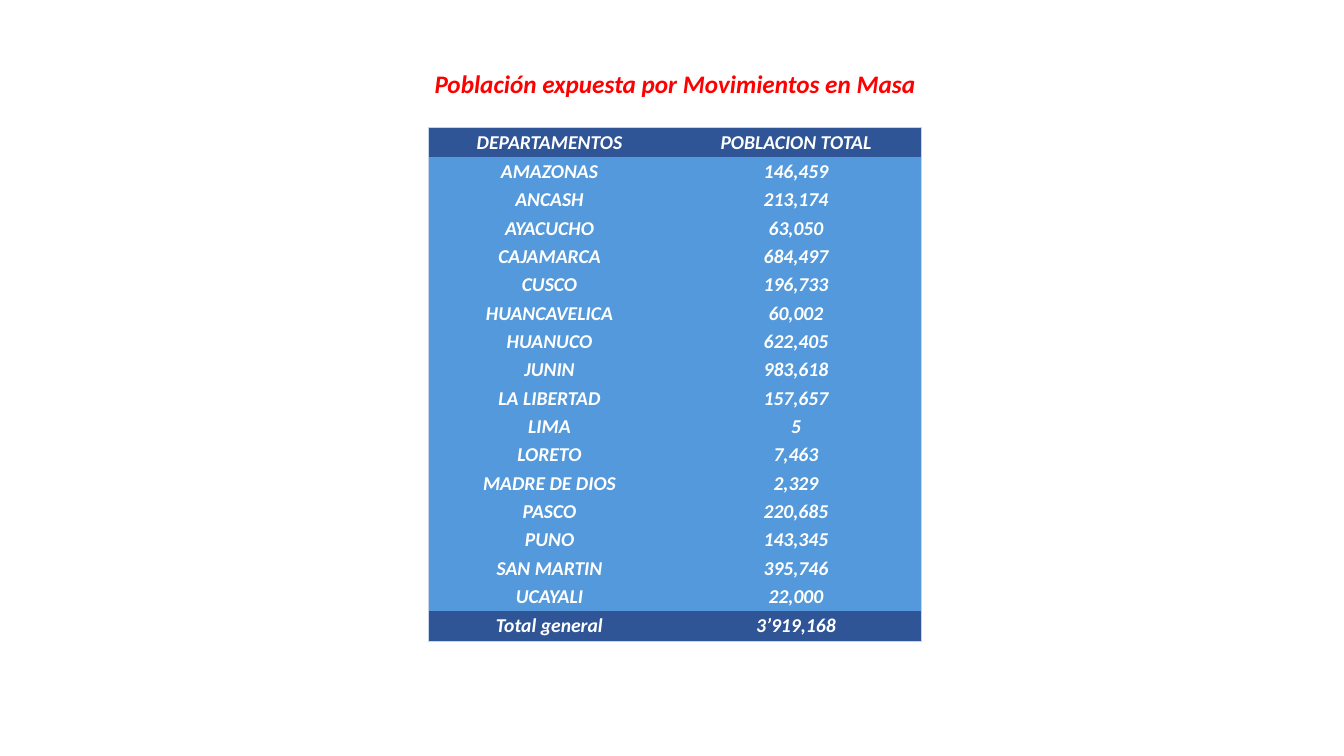
from dataclasses import dataclass

from lxml.etree import SubElement
from pptx import Presentation
from pptx.dml.color import RGBColor
from pptx.enum.text import MSO_ANCHOR, MSO_AUTO_SIZE, PP_ALIGN
from pptx.oxml.ns import qn
from pptx.util import Inches, Pt


@dataclass(frozen=True)
class Theme:
    font: str = "Calibri"
    title_size: int = 18
    cell_size: int = 14
    title: str = "FF0000"
    cell_text: str = "FFFFFF"
    band: str = "2F5597"
    body: str = "5399DB"
    border: str = "C4D5EB"
    border_width: float = 0.5
    plain_table: str = "{2D5ABB26-0587-4C30-8999-92F81FD0307C}"


THEME = Theme()

POPULATION = [
    ("DEPARTAMENTOS", "POBLACION TOTAL"),
    ("AMAZONAS", "146,459"),
    ("ANCASH", "213,174"),
    ("AYACUCHO", "63,050"),
    ("CAJAMARCA", "684,497"),
    ("CUSCO", "196,733"),
    ("HUANCAVELICA", "60,002"),
    ("HUANUCO", "622,405"),
    ("JUNIN", "983,618"),
    ("LA LIBERTAD", "157,657"),
    ("LIMA", "5"),
    ("LORETO", "7,463"),
    ("MADRE DE DIOS", "2,329"),
    ("PASCO", "220,685"),
    ("PUNO", "143,345"),
    ("SAN MARTIN", "395,746"),
    ("UCAYALI", "22,000"),
    ("Total general", "3’919,168"),
]


def format_text(frame, size, color):
    paragraph = frame.paragraphs[0]
    paragraph.alignment = PP_ALIGN.CENTER
    font = paragraph.runs[0].font
    font.name, font.size = THEME.font, Pt(size)
    font.bold = font.italic = True
    font.color.rgb = RGBColor.from_string(color)


def add_border(cell, side):
    line = SubElement(cell._tc.get_or_add_tcPr(), qn(f"a:ln{side}"),
                      w=str(Pt(THEME.border_width)))
    SubElement(SubElement(line, qn("a:solidFill")), qn("a:srgbClr"), val=THEME.border)


deck = Presentation()
deck.slide_width, deck.slide_height = Inches(13.33), Inches(7.5)
slide = deck.slides.add_slide(deck.slide_layouts[5])

# Title
title = slide.shapes.title
title.left, title.top = Inches(4.18), Inches(0.63)
title.width, title.height = Inches(5.03), Inches(0.4)
title.text_frame.text = "Población expuesta por Movimientos en Masa"
title.text_frame.word_wrap = False
title.text_frame.auto_size = MSO_AUTO_SIZE.SHAPE_TO_FIT_TEXT
format_text(title.text_frame, THEME.title_size, THEME.title)

# Table grid: equal body rows between a taller header and total
last_row, last_column = len(POPULATION) - 1, 1
table_height, band_height = Inches(5.1), Inches(0.3)
body_height = (table_height - 2 * band_height) // (last_row - 1)
population = slide.shapes.add_table(
    len(POPULATION), 2, Inches(4.25), Inches(1.26), Inches(4.89), table_height
).table
population.first_row = population.horz_banding = False
population._tbl.tblPr.find(qn("a:tableStyleId")).text = THEME.plain_table
population.columns[0].width = Inches(2.4)
population.columns[1].width = Inches(2.49)

# Cells, with a border around the outside only
for row, values in enumerate(POPULATION):
    is_band = row in (0, last_row)
    population.rows[row].height = band_height if is_band else body_height
    for column, value in enumerate(values):
        cell = population.cell(row, column)
        cell.text_frame.text = value
        format_text(cell.text_frame, THEME.cell_size, THEME.cell_text)
        cell.vertical_anchor = MSO_ANCHOR.MIDDLE
        cell.margin_left = cell.margin_right = cell.margin_top = Inches(0.01)
        cell.margin_bottom = 0
        edges = {"L": column == 0, "R": column == last_column,
                 "T": row == 0, "B": row == last_row}
        for side, is_outer in edges.items():
            if is_outer:
                add_border(cell, side)
        cell.fill.solid()
        cell.fill.fore_color.rgb = RGBColor.from_string(
            THEME.band if is_band else THEME.body)

deck.save("out.pptx")
